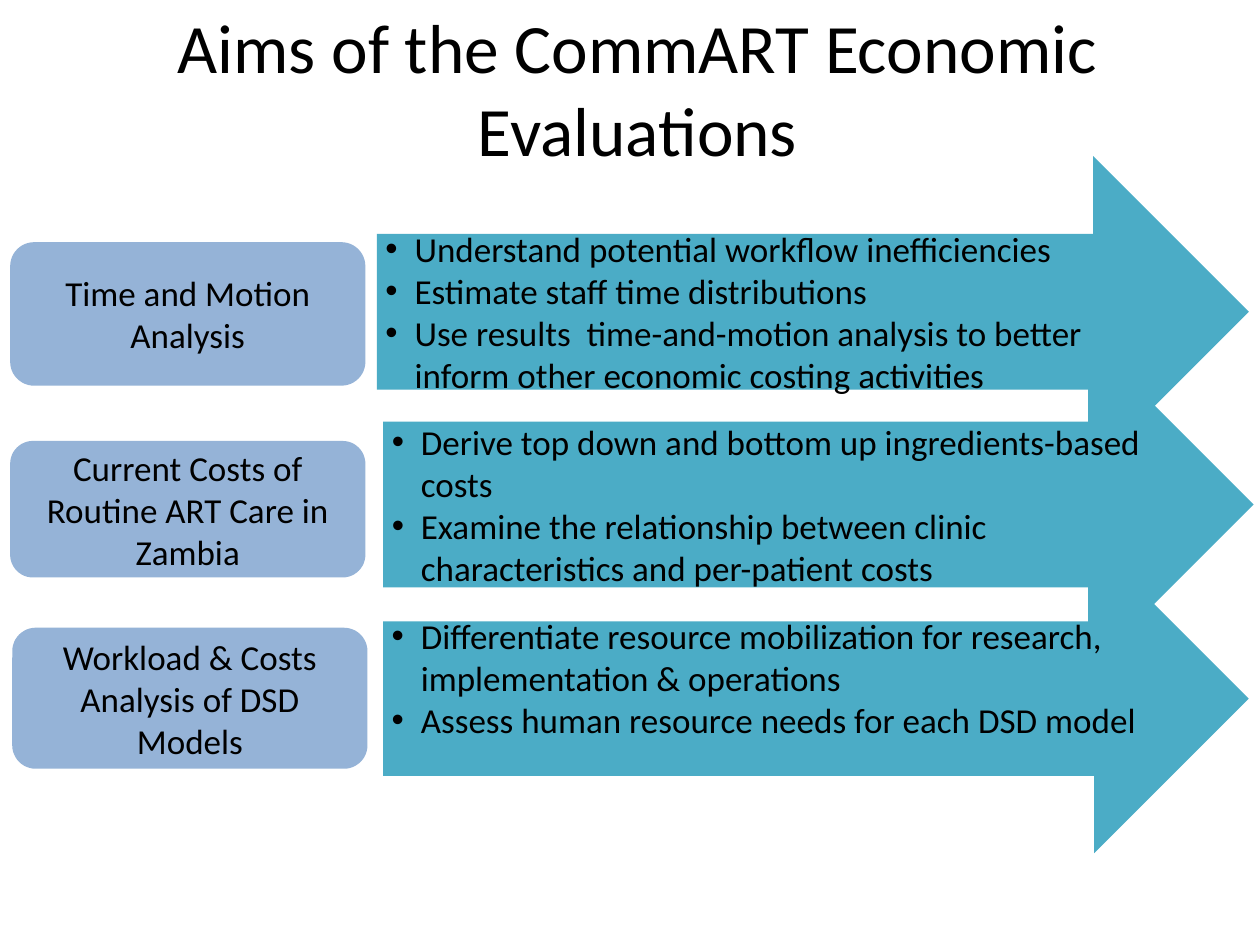
from dataclasses import dataclass

from pptx import Presentation
from pptx import util as u
from pptx.dml.color import RGBColor
from pptx.enum import shapes, text
from pptx.oxml import xmlchemy  # noqa: F401
from lxml import etree

BLACK = RGBColor(0x00, 0x00, 0x00)
LABEL_BLUE = RGBColor(0x95, 0xB3, 0xD7)
ARROW_TEAL = RGBColor(0x4B, 0xAC, 0xC6)

FONT = "Calibri"
BODY_SIZE = 20
HANGING = 16.6
DRAWING_NS = "http://schemas.openxmlformats.org/drawingml/2006/main"


@dataclass
class Area:
    left: float
    top: float
    width: float
    height: float


@dataclass
class Aim:
    label: str
    label_area: Area
    arrow_area: Area
    points: list[str]
    bottom_inset: float = 3


AIMS = [
    Aim("Time and Motion Analysis",
        Area(5.8, 138.4, 203, 82), Area(215.3, 89.3, 498.3, 177.8),
        ["Understand potential workflow inefficiencies",
         "Estimate staff time distributions",
         "Use results  time-and-motion analysis to better inform other "
         "economic costing activities"]),
    Aim("Current Costs of Routine ART Care in Zambia",
        Area(5.8, 252, 203, 78), Area(218.9, 193.7, 497.5, 189.3),
        ["Derive top down and bottom up ingredients-based costs",
         "Examine the relationship between clinic characteristics and "
         "per-patient costs"]),
    Aim("Workload & Costs Analysis of DSD Models",
        Area(7, 358.7, 203, 80.6), Area(218.9, 311, 494.7, 176.6),
        ["Differentiate resource mobilization for research, "
         "implementation & operations",
         "Assess human resource needs for each DSD model"],
        bottom_inset=27),
]


def place(shape, area: Area) -> None:
    shape.left, shape.top = u.Pt(area.left), u.Pt(area.top)
    shape.width, shape.height = u.Pt(area.width), u.Pt(area.height)


def add_span(para, words: str, size: float) -> None:
    span = para.add_run()
    span.text = words
    span.font.name = FONT
    span.font.size = u.Pt(size)
    span.font.color.rgb = BLACK


def add_bullet(para) -> None:
    properties = para._p.get_or_add_pPr()
    properties.set("marL", str(u.Pt(HANGING)))
    properties.set("indent", str(-u.Pt(HANGING)))
    font = etree.SubElement(properties, f"{{{DRAWING_NS}}}buFont")
    font.set("typeface", "Arial")
    bullet = etree.SubElement(properties, f"{{{DRAWING_NS}}}buChar")
    bullet.set("char", "•")


def add_box(page, preset, area: Area, fill: RGBColor, lines: list[str],
            bulleted: bool = False, bottom_inset: float = 3) -> None:
    box = page.shapes.add_shape(preset, 0, 0, 0, 0)
    place(box, area)
    box.shadow.inherit = False
    box.fill.solid()
    box.fill.fore_color.rgb = fill
    box.line.fill.background()

    frame = box.text_frame
    frame.word_wrap = True
    frame.vertical_anchor = text.MSO_ANCHOR.MIDDLE
    frame.margin_left = frame.margin_right = u.Pt(5)
    frame.margin_top, frame.margin_bottom = u.Pt(3), u.Pt(bottom_inset)
    for index, line in enumerate(lines):
        para = frame.add_paragraph() if index else frame.paragraphs[0]
        para.alignment = text.PP_ALIGN.LEFT if bulleted else text.PP_ALIGN.CENTER
        if bulleted:
            add_bullet(para)
        add_span(para, line, BODY_SIZE)


def add_title(page, words: str) -> None:
    title = page.shapes.title
    place(title, Area(12.2, 10.8, 704.2, 77.8))
    frame = title.text_frame
    frame.word_wrap = True
    frame.auto_size = text.MSO_AUTO_SIZE.NONE
    frame.vertical_anchor = text.MSO_ANCHOR.MIDDLE
    para = frame.paragraphs[0]
    para.alignment = text.PP_ALIGN.CENTER
    add_span(para, words, 39.6)


def main() -> None:
    deck = Presentation()
    deck.slide_width, deck.slide_height = u.Pt(720), u.Pt(540)
    page = deck.slides.add_slide(deck.slide_layouts.get_by_name("Title Only"))

    add_title(page, "Aims of the CommART Economic Evaluations")

    # Each aim is a rounded label with an arrow of bullet points beside it
    for aim in AIMS:
        add_box(page, shapes.MSO_SHAPE.ROUNDED_RECTANGLE, aim.label_area,
                LABEL_BLUE, [aim.label])
        add_box(page, shapes.MSO_SHAPE.RIGHT_ARROW, aim.arrow_area,
                ARROW_TEAL, aim.points, bulleted=True,
                bottom_inset=aim.bottom_inset)

    deck.save("out.pptx")


if __name__ == "__main__":
    main()
